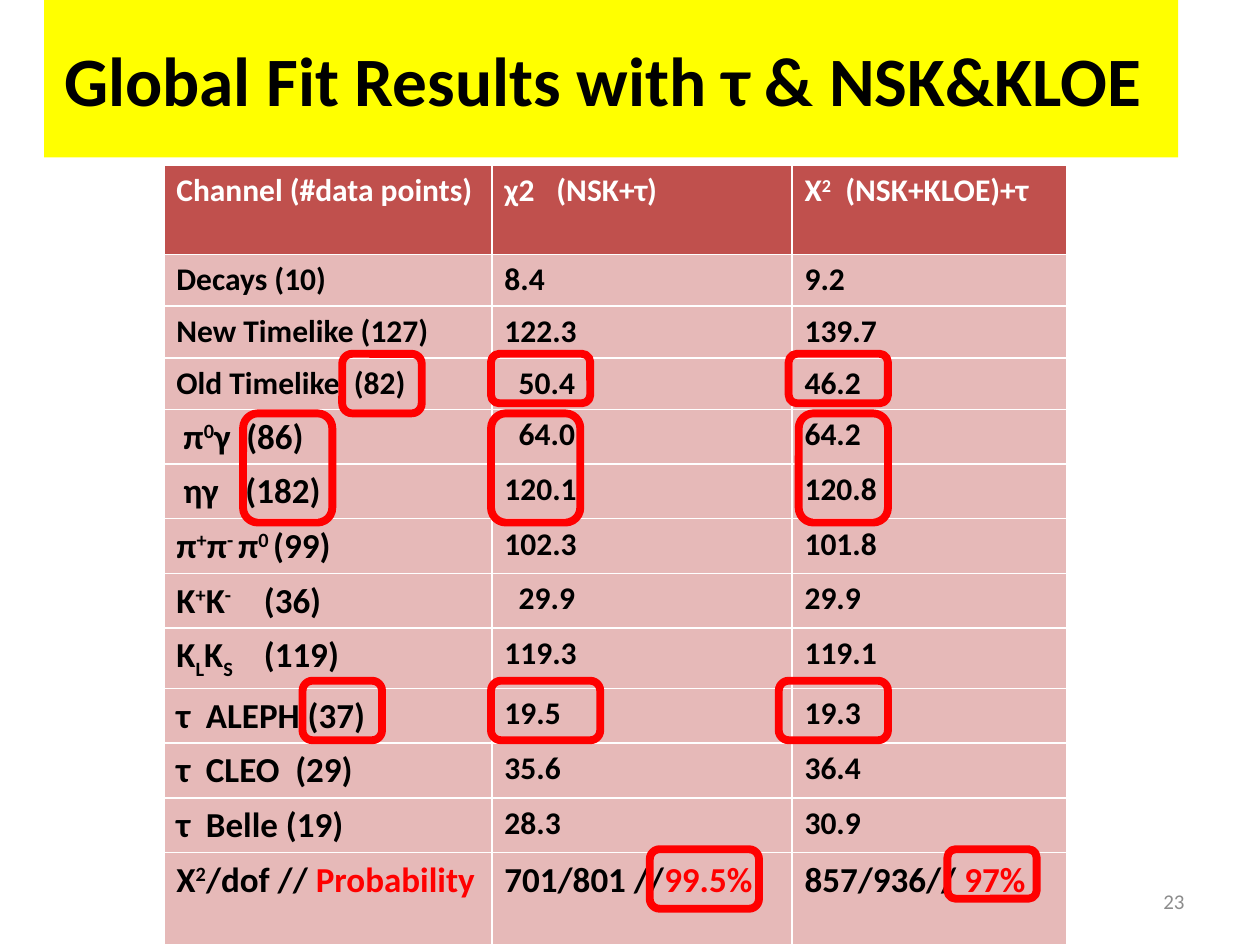
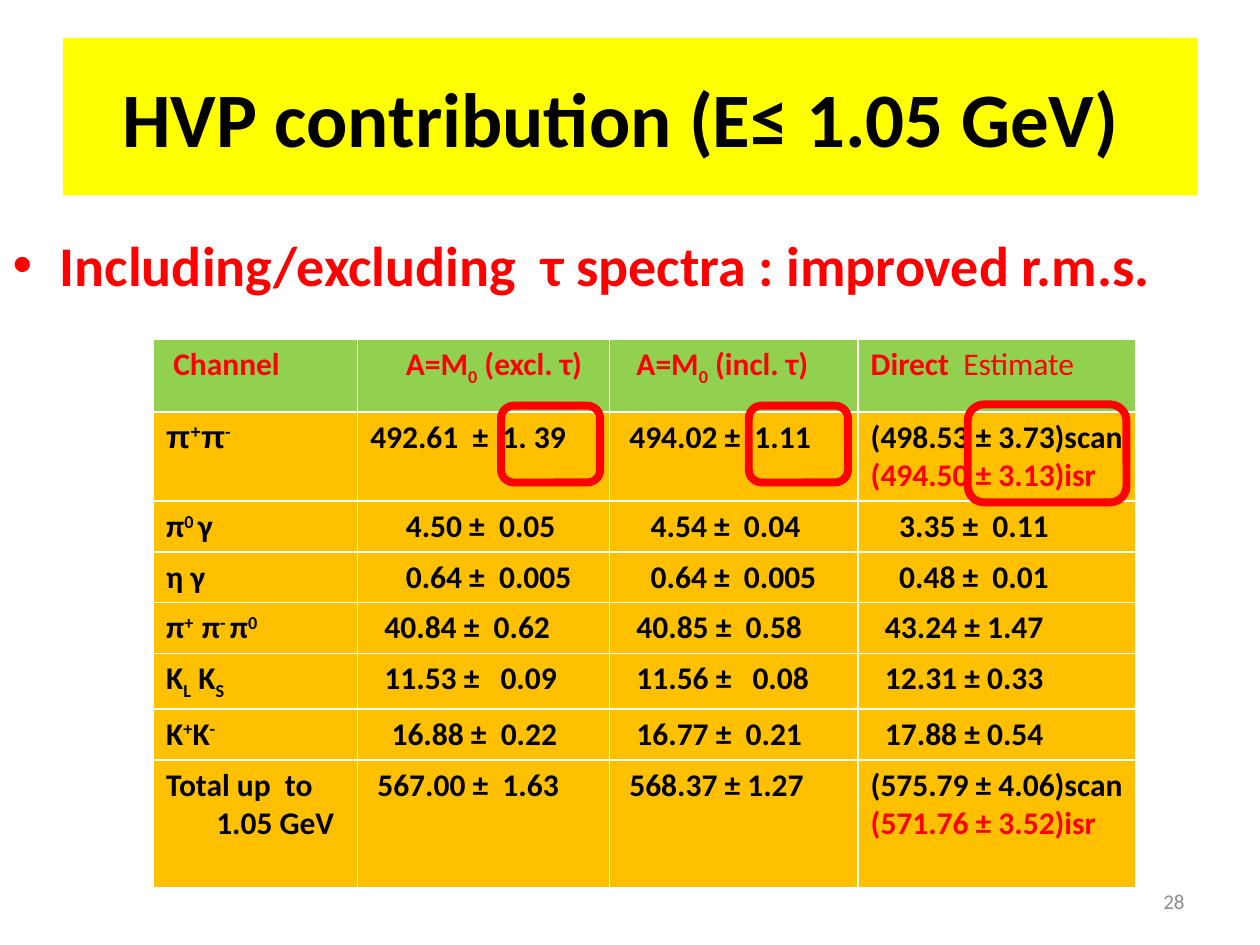
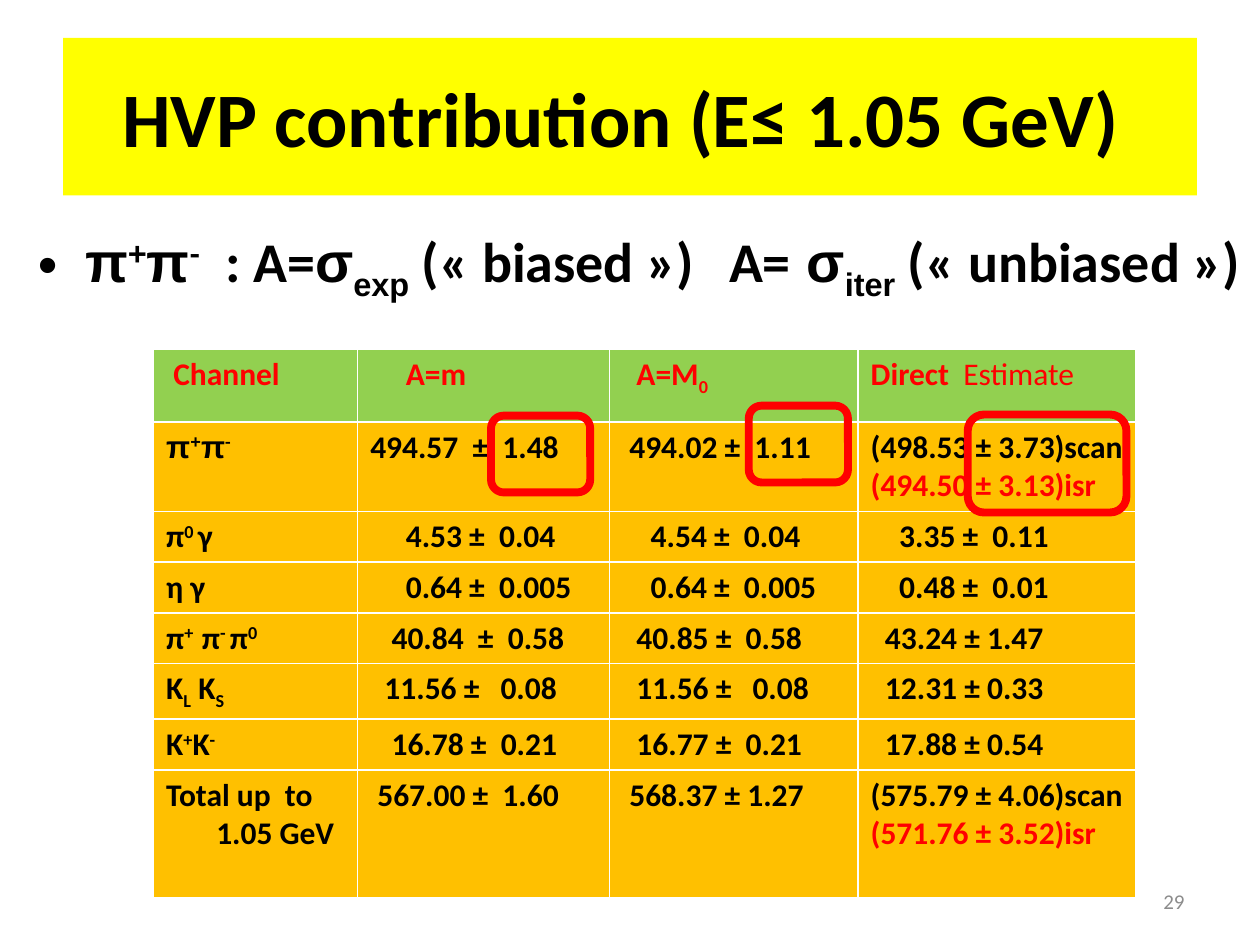
from lxml.etree import SubElement
from pptx import Presentation
from pptx.dml.color import RGBColor as Rgb
from pptx.enum.shapes import MSO_SHAPE as Shape
from pptx.enum.text import MSO_ANCHOR as Anchor, MSO_AUTO_SIZE as AutoSize, PP_ALIGN as Align
from pptx.oxml.ns import qn
from pptx.util import Pt

COLORS = {
    "ink": "000000", "white": "FFFFFF", "red": "FF0000", "grey": "8C8C8C", "band": "FFFF00",
    "brick": "C0504D", "rose": "E6B9B8", "green": "92D050", "amber": "FFC000",
}
FONT = "Calibri"
SPACE = 4.07  # width of one blank in 18 pt bold text
CELL_MARGIN = 7.2


# Content helpers: spans and cells
def span(text, **style):
    return text, style


def sup(text, **style):
    return span(text, base=30000, **style)


def sub(text, **style):
    return span(text, base=-25000, **style)


def red(text):
    return span(text, color="red")


def cell(*spans, lead=0, size=18, tab=None, more=(), more_indent=0):
    """A table cell; lead is its indent in blanks, more is a second paragraph."""
    return dict(spans=spans, lead=lead, size=size, tab=tab, more=more, more_indent=more_indent)


def column(lead, *texts):
    return [cell(text, lead=lead) for text in texts]


# Content: global fit
FIT_CHANNELS = [
    cell("Channel (#data points)"),
    cell("Decays (10)"),
    cell("New Timelike (127)"),
    cell("Old Timelike  (82)"),
    cell("π", sup("0"), "γ  (86)", lead=1, size=20),
    cell("ηγ\t(182)", lead=1, size=20, tab=35.4),
    cell("π", sup("+"), "π", sup("- "), "π", sup("0 "), "(99)", size=20),
    cell("K", sup("+"), "K", sup("-"), "\t(36)", size=20, tab=50),
    cell("K", sub("L"), "K", sub("S"), "\t(119)", size=20, tab=50),
    cell("τ  ALEPH (37)", size=20),
    cell("τ  CLEO  (29)", size=20),
    cell("τ  Belle (19)", size=20),
    cell("Χ", sup("2"), "/dof // ", red("Probability"), size=20),
]
FIT_NSK = [
    cell("χ2\t(NSK+τ)", tab=29.7),
    *column(0, "8.4", "122.3"),
    *column(2, "50.4", "64.0"),
    *column(0, "120.1", "102.3"),
    cell("29.9", lead=2),
    *column(0, "119.3", "19.5", "35.6", "28.3"),
    cell("701/801 //", red("99.5%"), size=20),
]
FIT_KLOE = [
    cell("Χ", sup("2"), "  (NSK+KLOE)+τ"),
    *column(0, "9.2", "139.7", "46.2", "64.2", "120.8", "101.8", "29.9", "119.1",
            "19.3", "36.4", "30.9"),
    cell("857/936// ", red("97%"), size=20),
]

# Content: HVP contribution
HVP_CHANNELS = [
    cell("Channel", lead=1),
    cell(span("π", font="Arial"), sup("+", font="Arial"), span("π", font="Arial"), sup("-")),
    cell("π", sup("0 "), "γ"),
    cell("η γ"),
    cell("π", sup("+  "), "π", sup("- "), "π", sup("0")),
    cell("K", sub("L"), " K", sub("S")),
    cell("K", sup("+"), "K", sup("-")),
    cell("Total up  to", more=["1.05 GeV"], more_indent=28.6),
]
HVP_EXCLUDED = [
    cell("A=M", sub("0"), " (excl. τ)", lead=5),
    cell("492.61  ±  1. 39"),
    *column(5, "4.50 ±  0.05", "0.64 ±  0.005"),
    cell("40.84 ±  0.62", lead=2),
    cell("11.53 ±\t0.09", lead=2, tab=66.3),
    cell("16.88 ±  0.22", lead=3),
    cell("567.00 ±  1.63", lead=1),
]
HVP_BIASED = [
    cell("A=m", lead=5),
    cell("494.57  ±  1.48"),
    *column(5, "4.53 ±  0.04", "0.64 ±  0.005"),
    cell("40.84  ±  0.58", lead=3),
    cell("11.56 ±\t0.08", lead=2, tab=66.3),
    cell("16.78 ±  0.21", lead=3),
    cell("567.00 ±  1.60", lead=1),
]
HVP_INCLUDED = [
    cell("494.02 ±  1.11", lead=1),
    *column(4, "4.54 ±  0.04", "0.64 ±  0.005"),
    cell("40.85 ±  0.58", lead=2),
    cell("11.56 ±\t0.08", lead=2, tab=66.3),
    cell("16.77 ±  0.21", lead=2),
    cell("568.37 ± 1.27", lead=1),
]
HVP_DIRECT = [
    cell("Direct  ", span("Estimate", bold=False)),
    cell("(498.53 ± 3.73)scan", more=[red("(494.50 ± 3.13)isr")]),
    *column(4, "3.35 ±  0.11", "0.48 ±  0.01"),
    *column(2, "43.24 ± 1.47", "12.31 ± 0.33", "17.88 ± 0.54"),
    cell("(575.79 ± 4.06)scan ", red("(571.76 ± 3.52)isr")),
]

FIT_TABLE = dict(
    left=93.6, widths=[187.5, 171.5, 157.2], heights=[51] + [29.5] * 3 + [30.5] * 8 + [52.5],
    head_fill="brick", head_ink="white", fill="rose")
HVP_TABLE = dict(
    left=87.8, widths=[116.6, 144, 142, 158.6], heights=[41.5, 51] + [29] * 5 + [73],
    head_fill="green", head_ink="red", fill="amber")
HVP_TITLE = dict(text="HVP contribution (E≤ 1.05 GeV) ", left=36, top=21.6, size=44)

PAGES = [
    dict(
        number="23",
        title=dict(text="Global Fit Results with τ & NSK&KLOE ", left=25.2, top=0, size=39.6),
        table=dict(FIT_TABLE, top=94.5, columns=[FIT_CHANNELS, FIT_NSK, FIT_KLOE]),
        marks=[  # left, top, width, height
            (195.6, 202.2, 45.4, 34), (280.6, 202.2, 56.7, 28.3), (450.7, 202.2, 56.7, 28.3),
            (138.9, 236.2, 51, 62.4), (280.6, 236.2, 51, 62.4), (456.4, 236.2, 51, 62.4),
            (172.9, 389, 45.4, 34), (280.6, 389, 62.4, 34), (445, 389, 62.4, 34),
            (371.3, 485.3, 62.4, 34), (541.4, 485.3, 51, 28.3),
        ],
    ),
    dict(
        number="28",
        title=HVP_TITLE,
        bullet=dict(left=0, top=128.2, color="red",
                    spans=["Including/excluding  τ spectra : improved r.m.s."]),
        table=dict(HVP_TABLE, top=193.9, columns=[
            HVP_CHANNELS, HVP_EXCLUDED,
            [cell("A=M", sub("0"), " (incl. τ)", lead=2)] + HVP_INCLUDED, HVP_DIRECT]),
        marks=[(286.3, 231.8, 56.7, 43.9), (427.9, 231.8, 56.7, 43.9), (553, 231.1, 90.7, 56)],
    ),
    dict(
        number="29",
        title=HVP_TITLE,
        bullet=dict(left=14.4, top=126, color="ink", tab=395, spans=[
            span("π", font="Arial"), sup("+", font="Arial"), span("π", font="Arial"), sup("-"),
            "  : A=", span("σ", font="Arial"), sub("exp", font="Arial"), " (« biased »)\tA=",
            span(" σ", font="Arial"), sub("iter", font="Arial"), " (« unbiased »)"]),
        table=dict(HVP_TABLE, top=199.7, columns=[
            HVP_CHANNELS, HVP_BIASED,
            [cell("A=M", sub("0"), lead=2)] + HVP_INCLUDED, HVP_DIRECT]),
        marks=[(280.6, 237.5, 56.7, 43.9), (427.9, 231.8, 56.7, 43.9), (553, 236.9, 90.7, 56)],
    ),
]


# Drawing
def rgb(name):
    return Rgb.from_string(COLORS[name])


def write(para, spans, size=18, color="ink", bold=True, align=None, indent=0, tab=None):
    """Fill a paragraph with spans, each a string or a (text, style) pair."""
    if align is not None:
        para.alignment = align
    if indent:
        para._p.get_or_add_pPr().set("marL", str(Pt(indent)))
    if tab:
        stops = SubElement(para._p.get_or_add_pPr(), qn("a:tabLst"))
        SubElement(stops, qn("a:tab"), pos=str(Pt(tab)), algn="l")
    for item in spans:
        text, style = (item, {}) if isinstance(item, str) else item
        run = para.add_run()
        run.text = text
        run.font.name = style.get("font", FONT)
        run.font.size = Pt(size)
        run.font.bold = style.get("bold", bold)
        run.font.color.rgb = rgb(style.get("color", color))
        if "base" in style:
            run.font._element.set("baseline", str(style["base"]))


def place(shape, left, top, width, height):
    shape.left, shape.top, shape.width, shape.height = map(Pt, (left, top, width, height))


def add_title(page, text, left, top, size):
    title = page.shapes.title
    place(title, left, top, 648, 90)
    title.fill.solid()
    title.fill.fore_color.rgb = rgb("band")
    title.text_frame.auto_size = AutoSize.NONE
    title.text_frame.vertical_anchor = Anchor.MIDDLE
    write(title.text_frame.paragraphs[0], [text], size=size, align=Align.CENTER)


def add_bullet(page, spans, left, top, color, tab=None):
    body = page.placeholders[1]
    place(body, left, top, 705.6, 398.9)
    body.text_frame.auto_size = AutoSize.NONE
    write(body.text_frame.paragraphs[0], spans, size=32, color=color, tab=tab)


def add_number(page, number):
    box = page.shapes.add_textbox(Pt(516), Pt(500.5), Pt(168), Pt(28.75))
    box.text_frame.word_wrap = True
    box.text_frame.vertical_anchor = Anchor.MIDDLE
    write(box.text_frame.paragraphs[0], [number], size=12, color="grey", bold=False,
          align=Align.RIGHT)


def fill_cell(target, content, fill, ink):
    target.fill.solid()
    target.fill.fore_color.rgb = rgb(fill)
    target.margin_left = Pt(CELL_MARGIN + content["lead"] * SPACE)
    frame, size = target.text_frame, content["size"]
    write(frame.paragraphs[0], content["spans"], size=size, color=ink, tab=content["tab"])
    if content["more"]:
        write(frame.add_paragraph(), content["more"], size=size, color=ink,
              indent=content["more_indent"])


def add_table(page, columns, left, top, widths, heights, head_fill, head_ink, fill):
    frame = page.shapes.add_table(len(heights), len(widths), Pt(left), Pt(top),
                                  Pt(sum(widths)), Pt(sum(heights)))
    table = frame.table
    for row, height in zip(table.rows, heights):
        row.height = Pt(height)
    for across, (width, cells) in enumerate(zip(widths, columns)):
        table.columns[across].width = Pt(width)
        for down, content in enumerate(cells):
            look = (fill, "ink") if down else (head_fill, head_ink)
            fill_cell(table.cell(down, across), content, *look)


def add_mark(page, left, top, width, height):
    mark = page.shapes.add_shape(Shape.ROUNDED_RECTANGLE, Pt(left), Pt(top), Pt(width), Pt(height))
    mark.shadow.inherit = False
    mark.fill.background()
    mark.line.color.rgb = rgb("red")
    mark.line.width = Pt(4.5)


def main():
    deck = Presentation()
    deck.slide_width, deck.slide_height = Pt(720), Pt(540)
    title_and_content, title_only = deck.slide_layouts[1], deck.slide_layouts[5]
    for content in PAGES:
        page = deck.slides.add_slide(title_and_content if "bullet" in content else title_only)
        add_title(page, **content["title"])
        if "bullet" in content:
            add_bullet(page, **content["bullet"])
        add_number(page, content["number"])
        add_table(page, **content["table"])
        for mark in content["marks"]:
            add_mark(page, *mark)
    deck.save("out.pptx")


if __name__ == "__main__":
    main()
